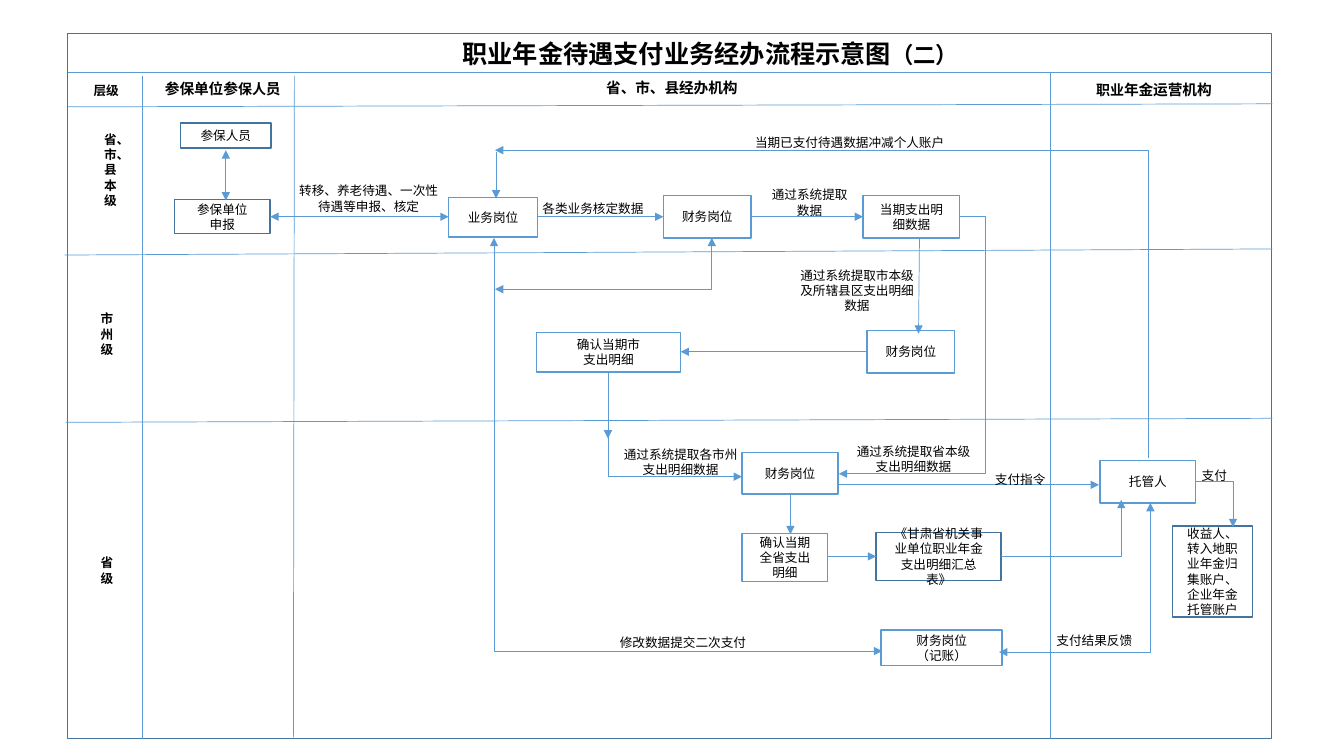
from lxml import etree
from pptx import Presentation
from pptx.dml.color import RGBColor
from pptx.enum.shapes import MSO_CONNECTOR, MSO_SHAPE
from pptx.enum.text import MSO_ANCHOR, MSO_AUTO_SIZE, PP_ALIGN
from pptx.oxml.ns import qn
from pptx.util import Inches, Pt

RECT = MSO_SHAPE.RECTANGLE
STRAIGHT, ELBOW = MSO_CONNECTOR.STRAIGHT, MSO_CONNECTOR.ELBOW
LEFT, CENTER = PP_ALIGN.LEFT, PP_ALIGN.CENTER
TOP, MIDDLE = MSO_ANCHOR.TOP, MSO_ANCHOR.MIDDLE
FIT_SHAPE, NO_FIT = MSO_AUTO_SIZE.SHAPE_TO_FIT_TEXT, MSO_AUTO_SIZE.NONE

BLUE = RGBColor(0x5B, 0x9B, 0xD5)
DARK_BLUE = RGBColor(0x43, 0x73, 0x9E)
BLACK = RGBColor(0, 0, 0)
WHITE = RGBColor(0xFF, 0xFF, 0xFF)
FONT = "Noto Sans CJK SC"
CELL = Inches(0.1)  # side of one grid cell


def cells(*values):
    return [round(v * CELL) for v in values]


class FlowSlide:
    """Draws on one slide; all lengths are grid columns and rows."""

    def __init__(self, slide):
        self.slide = slide
        self.shapes = slide.shapes

    def fill_text(self, tf, text, size=9, bold=False, align=CENTER):
        """Paragraphs are split at line breaks; a list gives (text, size) runs."""
        paragraphs = [text] if isinstance(text, list) else [
            [(line, size)] for line in text.split("\n")]
        for i, runs in enumerate(paragraphs):
            p = tf.add_paragraph() if i else tf.paragraphs[0]
            p.alignment = align
            for words, points in runs:
                r = p.add_run()
                r.text = words
                r.font.size = Pt(points)
                r.font.bold = bold
                r.font.color.rgb = BLACK
                r.font.name = FONT
                ea = etree.SubElement(r.font._element, qn("a:ea"))
                ea.set("typeface", FONT)

    def title(self, place, runs):
        sp = self.shapes.title
        sp.left, sp.top, sp.width, sp.height = cells(*place)
        tf = sp.text_frame
        tf.auto_size = NO_FIT
        tf.vertical_anchor = TOP
        self.fill_text(tf, runs, bold=True)

    def frame(self, place, line=BLUE):
        sp = self.shapes.add_shape(RECT, *cells(*place))
        sp.shadow.inherit = False
        sp.fill.background()
        sp.line.color.rgb = line
        sp.line.width = Pt(1)
        return sp

    def box(self, place, text, line=BLUE):
        sp = self.frame(place, line)
        sp.fill.solid()
        sp.fill.fore_color.rgb = WHITE
        tf = sp.text_frame
        tf.word_wrap = True
        tf.vertical_anchor = MIDDLE
        tf.margin_left = tf.margin_right = Inches(0.14)
        tf.margin_top = tf.margin_bottom = Inches(0.07)
        self.fill_text(tf, text)

    def label(self, place, text, size=9, bold=False, wrap=True):
        tf = self.shapes.add_textbox(*cells(*place)).text_frame
        tf.word_wrap = wrap
        tf.auto_size = FIT_SHAPE
        self.fill_text(tf, text, size, bold, CENTER if wrap else LEFT)

    def line(self, begin, end, arrows="", kind=STRAIGHT):
        """Arrows holds "<" for a head at the start and ">" for one at the end."""
        s = self.shapes.add_connector(kind, *cells(*begin, *end))
        s.line.color.rgb = BLUE
        s.line.width = Pt(0.5)
        ln = s._element.spPr.find(qn("a:ln"))
        for mark, tag in (("<", "a:headEnd"), (">", "a:tailEnd")):
            if mark in arrows:
                etree.SubElement(ln, qn(tag)).set("type", "triangle")
        etree.SubElement(s._element.spPr, qn("a:effectLst"))
        return s

    def elbow(self, begin, end, arrows, bend=None):
        """Runs level to column bend (by default the end), then up or down."""
        s = self.line(begin, end, arrows, ELBOW)
        bend = end[0] if bend is None else bend
        share = (bend - begin[0]) / (end[0] - begin[0])
        guides = s._element.spPr.find(qn("a:prstGeom")).find(qn("a:avLst"))
        gd = etree.SubElement(guides, qn("a:gd"))
        gd.set("name", "adj1")
        gd.set("fmla", f"val {round(share * 100000)}")


def draw_lanes(s):
    s.frame((6.7, 3.3, 119.4, 70), DARK_BLUE)
    s.title((42.5, 3.3, 55.9, 4), [("职业年金待遇支付业务经办流程示意图", 18), ("（二）", 16)])

    # Column and row rules
    for bottom_x, top_x, top in ((14.1, 14.1, 7.5), (29.1, 29.2, 7.5), (104.2, 104.2, 7.2)):
        s.line((bottom_x, 73.3), (top_x, top))
    for left, left_y, right_y in ((6.7, 7.2, 7.2), (6.7, 10.6, 10.3),
                                  (6.4, 25.3, 24.7), (6.5, 41.9, 41.5)):
        s.line((left, left_y), (126.2, right_y))

    # Column heads
    s.label((8.3, 7.7, 4.5, 2.5), "层级", bold=True, wrap=False)
    for place, head in (
        ((14.6, 7.4, 15, 2.8), [("参保单位参", 10.5), ("保人", 10), ("员", 10.5)]),
        ((54, 7.3, 25.3, 2.8), [("省、市、县经办机构", 10.5)]),
        ((103.9, 7.5, 21.1, 2.8), [("职业", 10), ("年金运营机构", 10.5)]),
    ):
        s.label(place, head, bold=True)

    # Level names
    for place, level in (
        ((9.3, 12.6, 3.3, 8.6), "省、\n市、县\n本\n级"),
        ((8.6, 30.4, 4, 5.6), "市\n州\n级"),
        ((8.6, 54.6, 4, 4), "省级"),
    ):
        s.label(place, level, bold=True)


def draw_boxes(s):
    for place, text in (
        ((44.5, 19.6, 8.8, 3.9), "业务岗位"),
        ((65.8, 19.4, 8.7, 4.2), "财务岗位"),
        ((85.6, 19.4, 9.6, 4.2), "当期支出明细数据"),
        ((86, 32.8, 8.7, 4.2), "财务岗位"),
        ((53.2, 33, 14.3, 3.9), "确认当期市\n支出明细"),
        ((73.6, 44.9, 9.5, 4.1), "财务岗位"),
        ((73.6, 52.9, 8.5, 4.8), "确认当期全省支出明细"),
        ((109.1, 45.7, 9.5, 4.2), "托管人"),
        ((87.4, 62.5, 12, 3.5), "财务岗位\n（记账）"),
    ):
        s.box(place, text)
    for place, text in (
        ((17.9, 12.2, 9, 2.5), "参保人员"),
        ((17.3, 19.8, 9.5, 3.4), "参保单位\n申报"),
        ((86.9, 52.8, 12.4, 4.8), "《甘肃省机关事业单位职业年金支出明细汇总表》"),
        ((116.3, 52.2, 7.9, 9), "收益人、转入地职业年金归集账户、企业年金托管账户"),
    ):
        s.box(place, text, DARK_BLUE)


def draw_arrows(s):
    # Straight steps
    for begin, end, arrows in (
        ((22.4, 14.9), (22.4, 19.9), "<>"),
        ((26.8, 21.5), (44.5, 21.5), "<>"),
        ((53.3, 21.5), (65.8, 21.5), ">"),
        ((74.5, 21.5), (85.6, 21.5), ">"),
        ((91.2, 23.6), (91.1, 33.1), ">"),
        ((86, 34.9), (67.5, 34.9), ">"),
        ((60.3, 36.9), (60.3, 43.5), ">"),
        ((78.4, 49), (78.4, 53), ">"),
        ((82.1, 55.2), (86.9, 55.2), ">"),
        ((83.2, 48.1), (109, 48.1), ">"),
        ((49.2, 15.1), (49.2, 19.7), ">"),
    ):
        s.line(begin, end, arrows)

    # Steps with a corner
    for begin, end, arrows in (
        ((87.5, 64.6), (49, 23.6), "<>"),
        ((73.6, 47.3), (60.3, 36.8), "<"),
        ((99.3, 55.2), (111.2, 49.6), ">"),
        ((118.6, 47.8), (122.3, 52.3), ">"),
        ((49.1, 14.9), (113.9, 45.4), "<"),
        ((49.1, 28.7), (70.6, 23.6), "<>"),
        ((99.1, 64.7), (114.1, 49.9), "<>"),
    ):
        s.elbow(begin, end, arrows)
    s.elbow((95.2, 21.5), (83.2, 47), ">", bend=97.7)


def draw_labels(s):
    for place, text in (
        ((28.5, 17.7, 16.1, 4), "转移、养老待遇、一次性待遇等申报、核定"),
        ((48.9, 19.4, 19.8, 2.5), "各类业务核定数据"),
        ((75.3, 18.1, 10, 4), "通过系统提取数据"),
        ((78.3, 26.1, 13.4, 5.6), "通过系统提取市本级及所辖县区支出明细数据"),
        ((60.8, 43.8, 13.4, 4), "通过系统提取各市州支出明细数据"),
        ((83.9, 43.5, 13.4, 4), "通过系统提取省本级支出明细数据"),
    ):
        s.label(place, text)
    for place, text in (
        ((73.9, 12.9, 21, 2.5), "当期已支付待遇数据冲减个人账户"),
        ((97.7, 46.3, 7.1, 2.5), "支付指令"),
        ((118.2, 45.9, 4.5, 2.5), "支付"),
        ((60.5, 62.5, 14.6, 2.5), "修改数据提交二次支付"),
        ((103.8, 62.3, 9.6, 2.5), "支付结果反馈"),
    ):
        s.label(place, text, wrap=False)


def main():
    prs = Presentation()
    prs.slide_width, prs.slide_height = Inches(13.33), Inches(7.5)
    s = FlowSlide(prs.slides.add_slide(prs.slide_layouts[5]))
    draw_lanes(s)
    draw_boxes(s)
    draw_arrows(s)
    draw_labels(s)
    prs.save("out.pptx")


if __name__ == "__main__":
    main()
